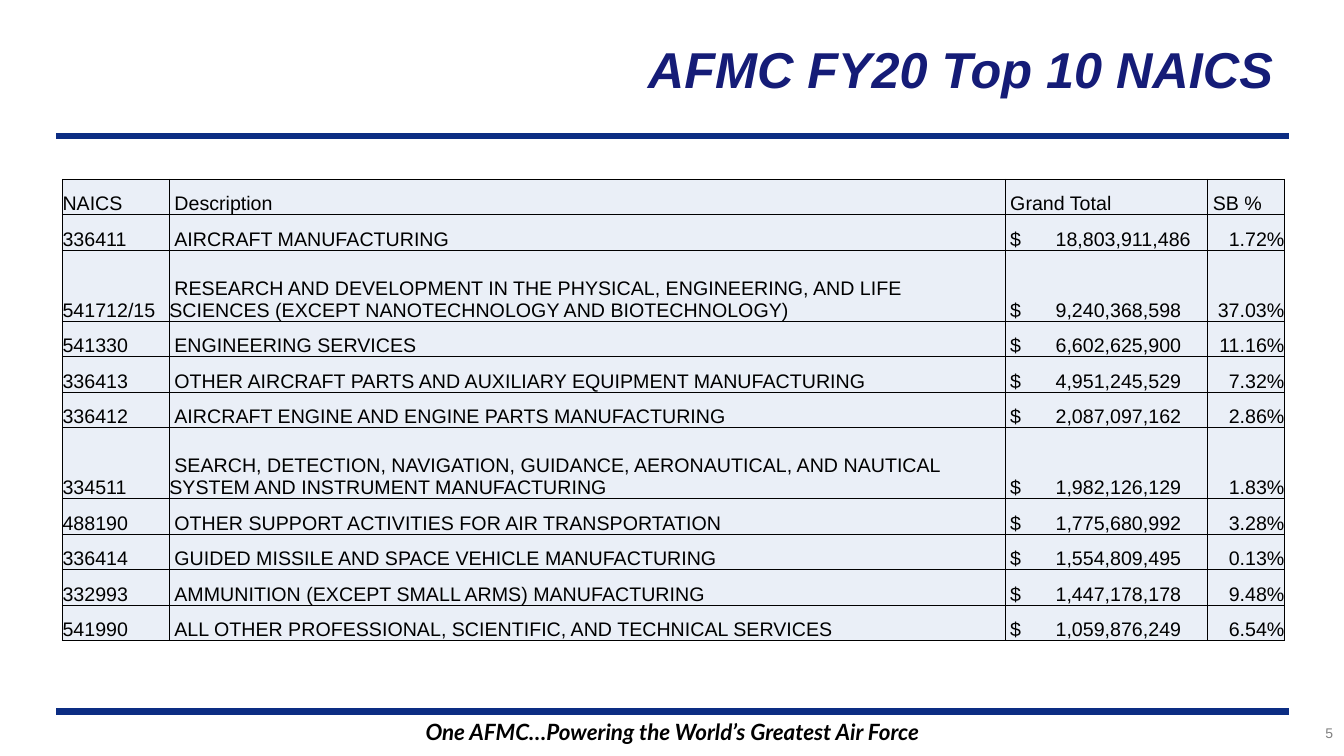
from lxml.etree import SubElement
from pptx import Presentation
from pptx.dml.color import RGBColor
from pptx.enum.shapes import MSO_CONNECTOR
from pptx.enum.text import MSO_ANCHOR, PP_ALIGN
from pptx.oxml.ns import qn
from pptx.util import Emu, Inches, Pt

# Content
TITLE = "AFMC FY20 Top 10 NAICS"
MOTTO = "One AFMC…Powering the World’s Greatest Air Force"
PAGE_NUMBER = "5"
HEADER = ("NAICS", "Description", "Grand Total", "SB %")
INDUSTRIES = [
    ("336411", "AIRCRAFT MANUFACTURING", "18,803,911,486", "1.72%"),
    ("541712/15", "RESEARCH AND DEVELOPMENT IN THE PHYSICAL, ENGINEERING, AND LIFE SCIENCES "
     "(EXCEPT NANOTECHNOLOGY AND BIOTECHNOLOGY)", "9,240,368,598", "37.03%"),
    ("541330", "ENGINEERING SERVICES", "6,602,625,900", "11.16%"),
    ("336413", "OTHER AIRCRAFT PARTS AND AUXILIARY EQUIPMENT MANUFACTURING", "4,951,245,529", "7.32%"),
    ("336412", "AIRCRAFT ENGINE AND ENGINE PARTS MANUFACTURING", "2,087,097,162", "2.86%"),
    ("334511", "SEARCH, DETECTION, NAVIGATION, GUIDANCE, AERONAUTICAL, AND NAUTICAL "
     "SYSTEM AND INSTRUMENT MANUFACTURING", "1,982,126,129", "1.83%"),
    ("488190", "OTHER SUPPORT ACTIVITIES FOR AIR TRANSPORTATION", "1,775,680,992", "3.28%"),
    ("336414", "GUIDED MISSILE AND SPACE VEHICLE MANUFACTURING", "1,554,809,495", "0.13%"),
    ("332993", "AMMUNITION (EXCEPT SMALL ARMS) MANUFACTURING", "1,447,178,178", "9.48%"),
    ("541990", "ALL OTHER PROFESSIONAL, SCIENTIFIC, AND TECHNICAL SERVICES", "1,059,876,249", "6.54%"),
]
COLORS = {"rule": "0C2D83", "title": "151C77", "text": "000000",
          "number": "808080", "cell": "EAEFF7", "border": "000000"}

# Layout, in inches
COLUMNS = (1.06, 8.29, 2.01, 0.76)
TABLE_LEFT, TABLE_TOP, TABLE_HEIGHT = 0.62, 1.78, 4.58
WRAP_LENGTH = 80  # longer descriptions take two row units
INDENT, AMOUNT_TAB = 0.05, 1.88
RULE_LEFT, RULE_RIGHT, RULE_TOPS = 0.56, 12.78, (1.35, 7.06)


def style(para, size, color="text", name="Arial", align=PP_ALIGN.LEFT, strong=False):
    para.alignment = align
    font = para.font
    font.name, font.size = name, Pt(size)
    font.bold = font.italic = strong
    font.color.rgb = RGBColor.from_string(COLORS[color])


def add_label(page, text, place, **look):
    box = page.shapes.add_textbox(*map(Inches, place))
    box.text_frame.word_wrap = True
    para = box.text_frame.paragraphs[0]
    para.text = text
    style(para, **look)


def add_borders(cell):
    properties = cell._tc.get_or_add_tcPr()
    for index, side in enumerate(("lnL", "lnR", "lnT", "lnB")):
        line = properties.makeelement(qn(f"a:{side}"), {"w": str(Pt(1))})
        properties.insert(index, line)
        fill = SubElement(line, qn("a:solidFill"))
        SubElement(fill, qn("a:srgbClr"), val=COLORS["border"])


def fill_cell(cell, text, column, is_header):
    cell.margin_left = cell.margin_right = cell.margin_top = cell.margin_bottom = Emu(0)
    cell.vertical_anchor = MSO_ANCHOR.BOTTOM
    cell.fill.solid()
    cell.fill.fore_color.rgb = RGBColor.from_string(COLORS["cell"])
    add_borders(cell)

    is_amount = column == 2 and not is_header
    is_share = column == 3 and not is_header
    para = cell.text_frame.paragraphs[0]
    para.text = f"$\t{text}" if is_amount else text
    properties = para._p.get_or_add_pPr()
    if column and not is_share:
        properties.set("marL", "0")
        properties.set("indent", str(Inches(INDENT)))
    if is_amount:
        tabs = SubElement(properties, qn("a:tabLst"))
        SubElement(tabs, qn("a:tab"), pos=str(Inches(AMOUNT_TAB)), algn="r")
    style(para, 14, align=PP_ALIGN.RIGHT if is_share else PP_ALIGN.LEFT)


def add_industry_table(page):
    rows = [HEADER, *INDUSTRIES]
    units = [2 if len(row[1]) > WRAP_LENGTH else 1 for row in rows]
    frame = page.shapes.add_table(len(rows), len(COLUMNS), Inches(TABLE_LEFT), Inches(TABLE_TOP),
                                  Inches(sum(COLUMNS)), Inches(TABLE_HEIGHT))
    table = frame.table
    table.horz_banding = False
    for column, width in zip(table.columns, COLUMNS):
        column.width = Inches(width)
    for r, row in enumerate(rows):
        table.rows[r].height = Inches(TABLE_HEIGHT * units[r] / sum(units))
        for c, text in enumerate(row):
            fill_cell(table.cell(r, c), text, c, r == 0)


def main():
    deck = Presentation()
    deck.slide_width, deck.slide_height = Inches(13.33), Inches(7.5)
    page = deck.slides.add_slide(deck.slide_layouts[5])

    # Rules above and below the table
    for top in RULE_TOPS:
        rule = page.shapes.add_connector(MSO_CONNECTOR.STRAIGHT, Inches(RULE_LEFT), Inches(top),
                                         Inches(RULE_RIGHT), Inches(top))
        rule.line.color.rgb = RGBColor.from_string(COLORS["rule"])
        rule.line.width = Pt(4.5)
        SubElement(rule._element.spPr, qn("a:effectLst"))

    # Title
    title = page.shapes.title
    title.left, title.top, title.width, title.height = map(Inches, (1.88, 0.05, 10.85, 1.25))
    title.text_frame.text = TITLE
    title.text_frame.vertical_anchor = MSO_ANCHOR.MIDDLE
    style(title.text_frame.paragraphs[0], 36, "title", align=PP_ALIGN.RIGHT, strong=True)

    # Table and footer
    add_industry_table(page)
    add_label(page, MOTTO, (RULE_LEFT, 7.08, RULE_RIGHT - RULE_LEFT, 0.37),
              size=16, name="Lato", align=PP_ALIGN.CENTER, strong=True)
    add_label(page, PAGE_NUMBER, (11.65, 7.14, 1.67, 0.33),
              size=10, color="number", align=PP_ALIGN.RIGHT)

    deck.save("out.pptx")


if __name__ == "__main__":
    main()
